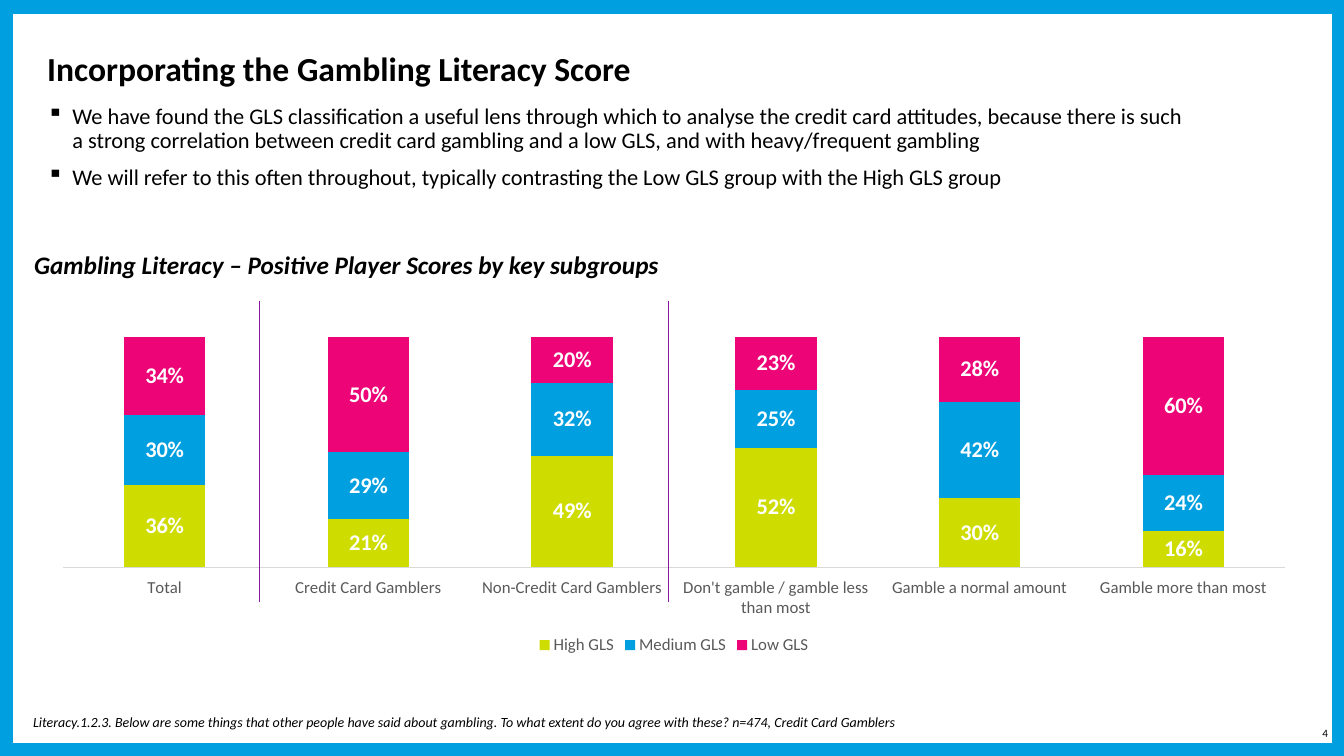
"""Builds the slide on Gambling Literacy Scores by key subgroups."""
from lxml.etree import SubElement
from pptx import Presentation
from pptx.chart.data import CategoryChartData
from pptx.dml.color import RGBColor
from pptx.enum.chart import XL_CHART_TYPE, XL_LEGEND_POSITION, XL_TICK_LABEL_POSITION, XL_TICK_MARK
from pptx.enum.shapes import MSO_CONNECTOR, MSO_SHAPE
from pptx.enum.text import MSO_ANCHOR, PP_ALIGN
from pptx.oxml.ns import qn
from pptx.util import Inches, Pt

FONT = "Calibri"
BLACK, WHITE, GREY, RULE = "000000", "FFFFFF", "595959", "D9D9D9"
BLUE, LIME, PINK, PURPLE = "009FDF", "CEDC00", "ED0477", "87189D"

TITLE = "Incorporating the Gambling Literacy Score"
BULLETS = [
    "We have found the GLS classification a useful lens through which to analyse the credit card "
    "attitudes, because there is such a strong correlation between credit card gambling and a low "
    "GLS, and with heavy/frequent gambling",
    "We will refer to this often throughout, typically contrasting the Low GLS group with the "
    "High GLS group",
]
CHART_HEADING = "Gambling Literacy – Positive Player Scores by key subgroups"
FOOTNOTE = ("Literacy.1.2.3. Below are some things that other people have said about gambling. "
            "To what extent do you agree with these? n=474, Credit Card Gamblers")
PAGE_NUMBER = "4"
SUBGROUPS = ["Total", "Credit Card Gamblers", "Non-Credit Card Gamblers",
             "Don't gamble / gamble less than most", "Gamble a normal amount",
             "Gamble more than most"]
SCORES = [
    ("High GLS", LIME, (0.36, 0.21, 0.49, 0.52, 0.30, 0.16)),
    ("Medium GLS", BLUE, (0.30, 0.29, 0.32, 0.25, 0.42, 0.24)),
    ("Low GLS", PINK, (0.34, 0.50, 0.20, 0.23, 0.28, 0.60)),
]
PANELS = [((0, 0, 13.33, 7.5), BLUE), ((0.13, 0.14, 13.08, 7.23), WHITE)]
CHART_BOX = (0.37, 3.28, 12.63, 3.26)
DIVIDERS, DIVIDER_TOP, DIVIDER_BOTTOM = (2.57, 6.63), 2.99, 5.97


def color(value):
    return RGBColor.from_string(value)


def inches(values):
    return [Inches(value) for value in values]


def style_font(font, size, value, bold=False, italic=False):
    font.name, font.size = FONT, Pt(size)
    font.bold, font.italic = bold, italic
    font.color.rgb = color(value)


def add_panel(slide, box, fill):
    shape = slide.shapes.add_shape(MSO_SHAPE.RECTANGLE, *inches(box))
    shape.shadow.inherit = False
    shape.fill.solid()
    shape.fill.fore_color.rgb = color(fill)
    shape.line.fill.background()


def add_text(shape, texts, size, bold=False, italic=False, spacing=None, bullet=None):
    frame = shape.text_frame
    frame.word_wrap = True
    for index, text in enumerate(texts):
        paragraph = frame.add_paragraph() if index else frame.paragraphs[0]
        if spacing:
            paragraph.line_spacing = spacing
        if bullet:
            paragraph.space_before = Pt(5 if index else 0)
            paragraph.space_after = Pt(4)
            properties = paragraph._p.get_or_add_pPr()
            properties.set("marL", str(Inches(0.25)))
            properties.set("indent", str(Inches(-0.25)))
            SubElement(properties, qn("a:buChar"), char=bullet)
        run = paragraph.add_run()
        run.text = text
        style_font(run.font, size, BLACK, bold, italic)
    return frame


def add_text_box(slide, box, texts, size, **style):
    return add_text(slide.shapes.add_textbox(*inches(box)), texts, size, **style)


def add_score_chart(slide):
    data = CategoryChartData(number_format="0%")
    data.categories = SUBGROUPS
    for name, fill, values in SCORES:
        data.add_series(name, values)
    chart = slide.shapes.add_chart(
        XL_CHART_TYPE.COLUMN_STACKED_100, *inches(CHART_BOX), data).chart
    style_font(chart.font, 10, BLACK)
    chart.has_title = False
    chart.has_legend = True
    chart.legend.position = XL_LEGEND_POSITION.BOTTOM
    chart.legend.include_in_layout = False
    style_font(chart.legend.font, 12, GREY)

    category_axis, value_axis = chart.category_axis, chart.value_axis
    category_axis.major_tick_mark = XL_TICK_MARK.NONE
    category_axis.tick_label_position = XL_TICK_LABEL_POSITION.LOW
    category_axis.format.line.color.rgb = color(RULE)
    category_axis.format.line.width = Pt(0.75)
    style_font(category_axis.tick_labels.font, 12, GREY)
    value_axis.visible = False
    value_axis.has_major_gridlines = False

    plot = chart.plots[0]
    plot.gap_width, plot.overlap, plot.vary_by_categories = 150, 100, False
    for series, (name, fill, values) in zip(plot.series, SCORES):
        series.format.fill.solid()
        series.format.fill.fore_color.rgb = color(fill)
        labels = series.data_labels
        labels.show_value = True
        labels.number_format, labels.number_format_is_linked = "0%", False
        style_font(labels.font, 16, WHITE, bold=True)


def add_divider(slide, left):
    line = slide.shapes.add_connector(
        MSO_CONNECTOR.STRAIGHT, *inches((left, DIVIDER_TOP, left, DIVIDER_BOTTOM)))
    line.line.color.rgb = color(PURPLE)
    line.line.width = Pt(0.5)
    SubElement(line._element.spPr, qn("a:effectLst"))


def main():
    presentation = Presentation()
    presentation.slide_width, presentation.slide_height = inches((13.33, 7.5))
    slide = presentation.slides.add_slide(presentation.slide_layouts[6])
    for box, fill in PANELS:
        add_panel(slide, box, fill)
    number = add_text_box(slide, (12.93, 7.17, 0.34, 0.2), [PAGE_NUMBER], 8)
    number.vertical_anchor = MSO_ANCHOR.MIDDLE
    number.paragraphs[0].alignment = PP_ALIGN.RIGHT
    add_text_box(slide, (0.37, 0.47, 11.5, 0.46), [TITLE], 24, bold=True, spacing=0.9)
    add_score_chart(slide)
    for left in DIVIDERS:
        add_divider(slide, left)
    add_text_box(slide, (0.37, 0.99, 11.5, 0.95), BULLETS, 16, spacing=0.9, bullet="▪")
    add_text_box(slide, (0.24, 2.42, 10.38, 0.4), [CHART_HEADING], 18, bold=True, italic=True)
    add_text_box(slide, (0.23, 7.03, 11.06, 0.27), [FOOTNOTE], 10, italic=True)
    presentation.save("out.pptx")


if __name__ == "__main__":
    main()
